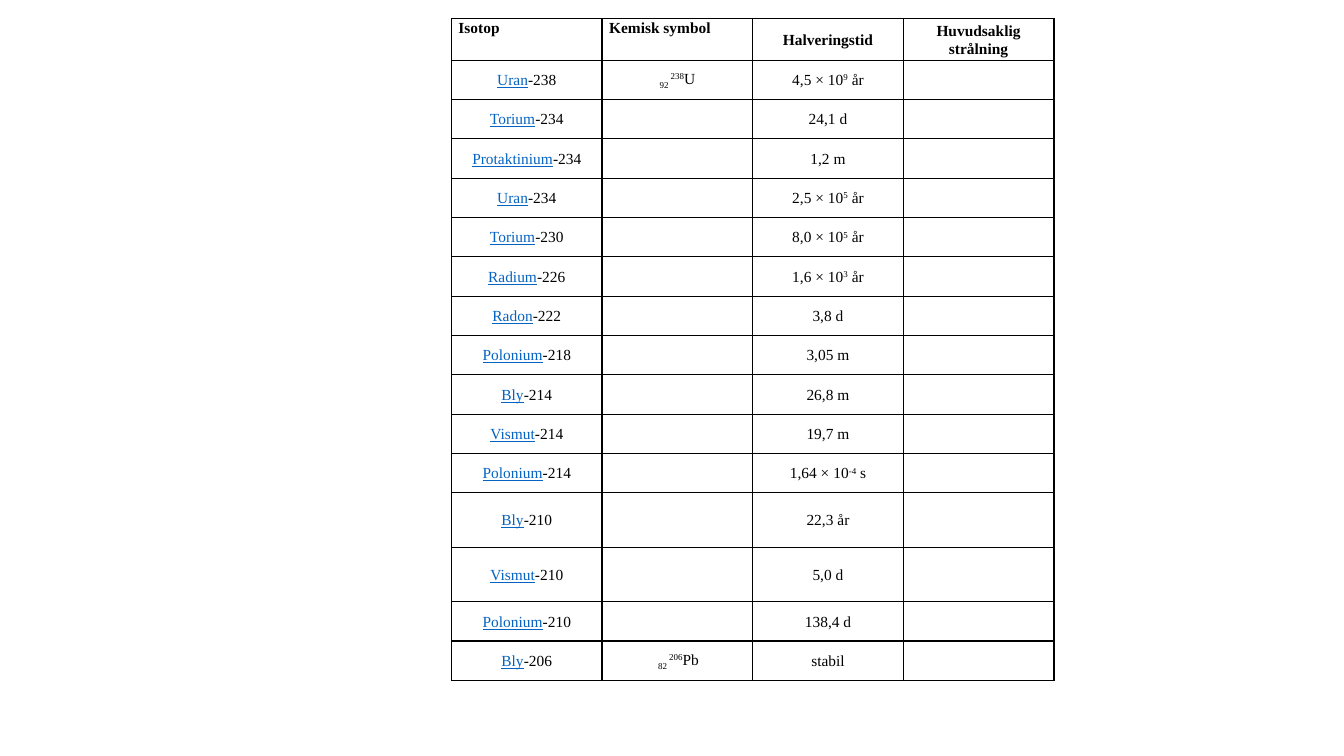
from dataclasses import dataclass

from lxml.etree import SubElement
from pptx import Presentation
from pptx.dml.color import RGBColor
from pptx.enum.text import MSO_ANCHOR, PP_ALIGN
from pptx.oxml.ns import qn
from pptx.table import Table, _Cell
from pptx.text.text import _Paragraph
from pptx.util import Pt

BLACK = RGBColor(0x00, 0x00, 0x00)
LINK = RGBColor(0x05, 0x63, 0xC1)
FONT = "Times New Roman"
LEFT, TOP = 322.5, 13.5
COL = 107.6
HEAD, ROW, TALL = 29.5, 28.1, 38.9
SUB, SUPER = -25, 30


@dataclass(frozen=True)
class Isotope:
    name: str
    mass: int
    time: str
    power: str = ""
    unit: str = ""
    charge: str = ""
    symbol: str = ""
    height: float = ROW


HEADS = ["Isotop", "Kemisk symbol", "Halveringstid", "Huvudsaklig strålning"]
CHAIN = [
    Isotope("Uran", 238, "4,5 × 10", "9", " år", "92", "U"),
    Isotope("Torium", 234, "24,1 d"),
    Isotope("Protaktinium", 234, "1,2 m"),
    Isotope("Uran", 234, "2,5 × 10", "5", " år"),
    Isotope("Torium", 230, "8,0 × 10", "5", " år"),
    Isotope("Radium", 226, "1,6 × 10", "3", " år"),
    Isotope("Radon", 222, "3,8 d"),
    Isotope("Polonium", 218, "3,05 m"),
    Isotope("Bly", 214, "26,8 m"),
    Isotope("Vismut", 214, "19,7 m"),
    Isotope("Polonium", 214, "1,64 × 10", "-4", " s"),
    Isotope("Bly", 210, "22,3 år", height=TALL),
    Isotope("Vismut", 210, "5,0 d", height=TALL),
    Isotope("Polonium", 210, "138,4 d"),
    Isotope("Bly", 206, "stabil", charge=" 82", symbol="Pb"),
]


def write(para: _Paragraph, text: str, *, color: RGBColor = BLACK,
          bold: bool = False, line: bool = False, base: int = 0) -> None:
    """Add a run; base is the shift from the baseline in percent."""
    run = para.add_run()
    run.text = text
    font = run.font
    font.name, font.size = FONT, Pt(11)
    font.bold, font.underline = bold, line
    font.color.rgb = color
    if base:
        run._r.get_or_add_rPr().set("baseline", str(base * 1000))


def frame(cell: _Cell) -> None:
    """Set the margins, the black borders and the empty fill of a cell."""
    cell.margin_left = cell.margin_right = Pt(5)
    cell.margin_top = cell.margin_bottom = Pt(0)
    props = cell._tc.get_or_add_tcPr()
    for side in ("a:lnL", "a:lnR", "a:lnT", "a:lnB"):
        edge = SubElement(props, qn(side), w=str(Pt(1)))
        fill = SubElement(edge, qn("a:solidFill"))
        SubElement(fill, qn("a:srgbClr"), val=str(BLACK))
    cell.fill.background()


def center(cell: _Cell) -> _Paragraph:
    cell.vertical_anchor = MSO_ANCHOR.MIDDLE
    para = cell.text_frame.paragraphs[0]
    para.alignment = PP_ALIGN.CENTER
    para.line_spacing = 1.07
    para.space_after = Pt(8)
    return para


def fill_head(table: Table) -> None:
    for col, text in enumerate(HEADS):
        cell = table.cell(0, col)
        if col < 2:
            para = cell.text_frame.paragraphs[0]
            para.line_spacing = 1.07
        else:
            para = center(cell)
        write(para, text, bold=True)


def fill_row(table: Table, row: int, item: Isotope) -> None:
    para = center(table.cell(row, 0))
    write(para, item.name, color=LINK, line=True)
    write(para, f"-{item.mass}")
    if item.symbol:
        para = center(table.cell(row, 1))
        write(para, item.charge, base=SUB)
        write(para, f" {item.mass}", base=SUPER)
        write(para, item.symbol)
    para = center(table.cell(row, 2))
    write(para, item.time)
    if item.power:
        write(para, item.power, base=SUPER)
        write(para, item.unit)


def main() -> None:
    deck = Presentation()
    deck.slide_width, deck.slide_height = Pt(960), Pt(540)
    slide = deck.slides.add_slide(deck.slide_layouts[6])
    sizes = [HEAD] + [item.height for item in CHAIN]
    table = slide.shapes.add_table(
        len(sizes), len(HEADS), Pt(LEFT), Pt(TOP),
        Pt(COL * len(HEADS)), Pt(sum(sizes))).table
    table.first_row = table.horz_banding = False
    for row, size in zip(table.rows, sizes):
        row.height = Pt(size)
    for cell in table.iter_cells():
        frame(cell)
    fill_head(table)
    for row, item in enumerate(CHAIN, 1):
        fill_row(table, row, item)
    deck.save("out.pptx")


if __name__ == "__main__":
    main()
